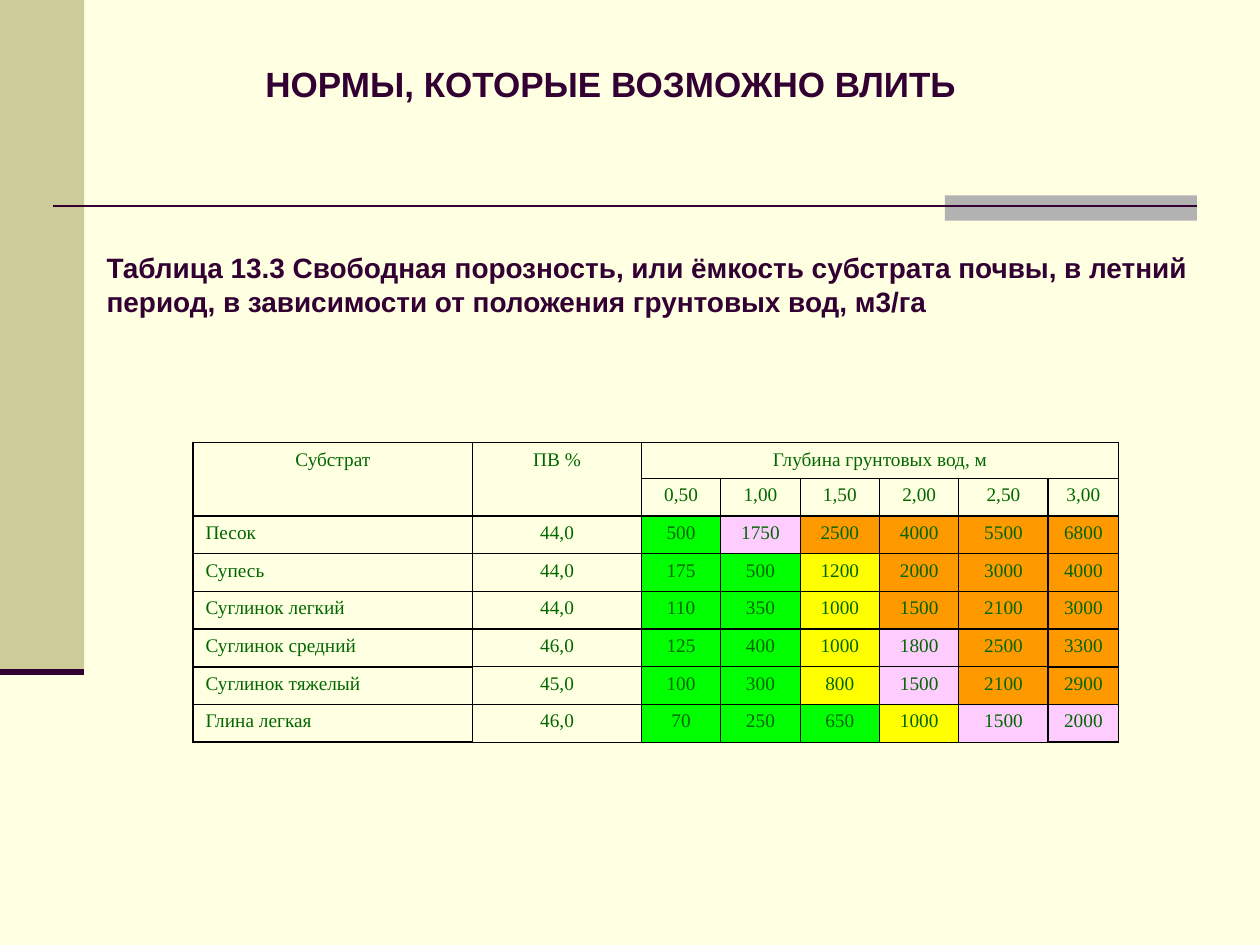
"""Build a slide with a table of free soil porosity by groundwater depth."""
from lxml import etree
from pptx import Presentation
from pptx.dml.color import RGBColor
from pptx.enum.shapes import MSO_CONNECTOR, MSO_SHAPE
from pptx.enum.text import MSO_ANCHOR, PP_ALIGN
from pptx.oxml.ns import qn
from pptx.util import Cm, Pt

RECTANGLE = MSO_SHAPE.RECTANGLE
STRAIGHT = MSO_CONNECTOR.STRAIGHT
MIDDLE = MSO_ANCHOR.MIDDLE
TOP = MSO_ANCHOR.TOP
LEFT = PP_ALIGN.LEFT
CENTER = PP_ALIGN.CENTER
PLUM = "330033"
FILLS = {"g": "00FF00", "y": "FFFF00", "p": "FFCCFF", "o": "FF9900"}


def color(value):
    return RGBColor.from_string(value)


def write_text(target, text, size=11, font="Times New Roman", fill="006600",
               bold=False, align=CENTER, anchor=MIDDLE):
    frame = target.text_frame
    frame.word_wrap = True
    frame.vertical_anchor = anchor
    paragraph = frame.paragraphs[0]
    paragraph.alignment = align
    run = paragraph.add_run()
    run.text = text
    run.font.size = Pt(size)
    run.font.name = font
    run.font.bold = bold
    run.font.color.rgb = color(fill)


presentation = Presentation()
presentation.slide_width = Cm(25.4)
presentation.slide_height = Cm(19.05)
slide = presentation.slides.add_slide(presentation.slide_layouts[6])
slide.background.fill.solid()
slide.background.fill.fore_color.rgb = color("FFFFE1")

bands = [(0, 0, 1.7, 13.54, "CCCC99"), (19.05, 3.94, 5.08, 0.51, "B2B2B2")]
for left, top, width, height, fill in bands:
    shape = slide.shapes.add_shape(RECTANGLE, Cm(left), Cm(top), Cm(width), Cm(height))
    shape.shadow.inherit = False
    shape.fill.solid()
    shape.fill.fore_color.rgb = color(fill)
    shape.line.fill.background()

rules = [(1.06, 24.13, 4.15, 1.5), (0, 1.7, 13.54, 3.5)]
for start, end, height, weight in rules:
    connector = slide.shapes.add_connector(STRAIGHT, Cm(start), Cm(height), Cm(end), Cm(height))
    connector.line.color.rgb = color(PLUM)
    connector.line.width = Pt(weight)
    etree.SubElement(connector.element.spPr, qn("a:effectLst"))

headings = [
    (5.1, 1.12, 14.6, 1.14, 20, MIDDLE, "НОРМЫ, КОТОРЫЕ ВОЗМОЖНО ВЛИТЬ"),
    (1.9, 4.93, 22.8, 1.63, 16, TOP,
     "Таблица 13.3 Свободная порозность, или ёмкость субстрата почвы, в летний "
     "период, в зависимости от положения грунтовых вод, м3/га"),
]
for left, top, width, height, size, anchor, text in headings:
    box = slide.shapes.add_textbox(Cm(left), Cm(top), Cm(width), Cm(height))
    write_text(box, text, size=size, font="Arial", fill=PLUM, bold=True,
               align=LEFT, anchor=anchor)

header = ["Субстрат", "ПВ %", "Глубина грунтовых вод, м"]
depths = ["", "", "0,50", "1,00", "1,50", "2,00", "2,50", "3,00"]
soils = [
    ("Песок", "44,0", "500 1750 2500 4000 5500 6800", "gpoooo"),
    ("Супесь", "44,0", "175 500 1200 2000 3000 4000", "ggyooo"),
    ("Суглинок легкий", "44,0", "110 350 1000 1500 2100 3000", "ggyooo"),
    ("Суглинок средний", "46,0", "125 400 1000 1800 2500 3300", "ggypoo"),
    ("Суглинок тяжелый", "45,0", "100 300 800 1500 2100 2900", "ggypoo"),
    ("Глина легкая", "46,0", "70 250 650 1000 1500 2000", "gggypp"),
]
rows = [header + [""] * 5, depths]
rows += [[soil, capacity, *volumes.split()] for soil, capacity, volumes, codes in soils]
widths = [5.64, 3.4] + [1.6] * 4 + [1.8, 1.42]
heights = [0.7] + [0.76] * 7

table = slide.shapes.add_table(len(rows), len(widths), Cm(3.89), Cm(8.92),
                               Cm(sum(widths)), Cm(sum(heights))).table
table.first_row = False
table.horz_banding = False
for column, width in zip(table.columns, widths):
    column.width = Cm(width)
for row, height in zip(table.rows, heights):
    row.height = Cm(height)
table.cell(0, 0).merge(table.cell(1, 0))
table.cell(0, 1).merge(table.cell(1, 1))
table.cell(0, 2).merge(table.cell(0, 7))

for row_index, texts in enumerate(rows):
    for column_index, text in enumerate(texts):
        cell = table.cell(row_index, column_index)
        is_soil = row_index > 1 and column_index == 0
        if text:
            write_text(cell, text, align=LEFT if is_soil else CENTER)
        properties = cell._tc.get_or_add_tcPr()
        weight = 1 if row_index == 0 or column_index in (0, 7) else 0.75
        for side in ("a:lnL", "a:lnR", "a:lnT", "a:lnB"):
            border = etree.SubElement(properties, qn(side), w=str(Pt(weight)))
            solid = etree.SubElement(border, qn("a:solidFill"))
            etree.SubElement(solid, qn("a:srgbClr"), val="000000")
        if row_index > 1 and column_index > 1:
            cell.fill.solid()
            code = soils[row_index - 2][3][column_index - 2]
            cell.fill.fore_color.rgb = color(FILLS[code])
        else:
            cell.fill.background()

presentation.save("out.pptx")
